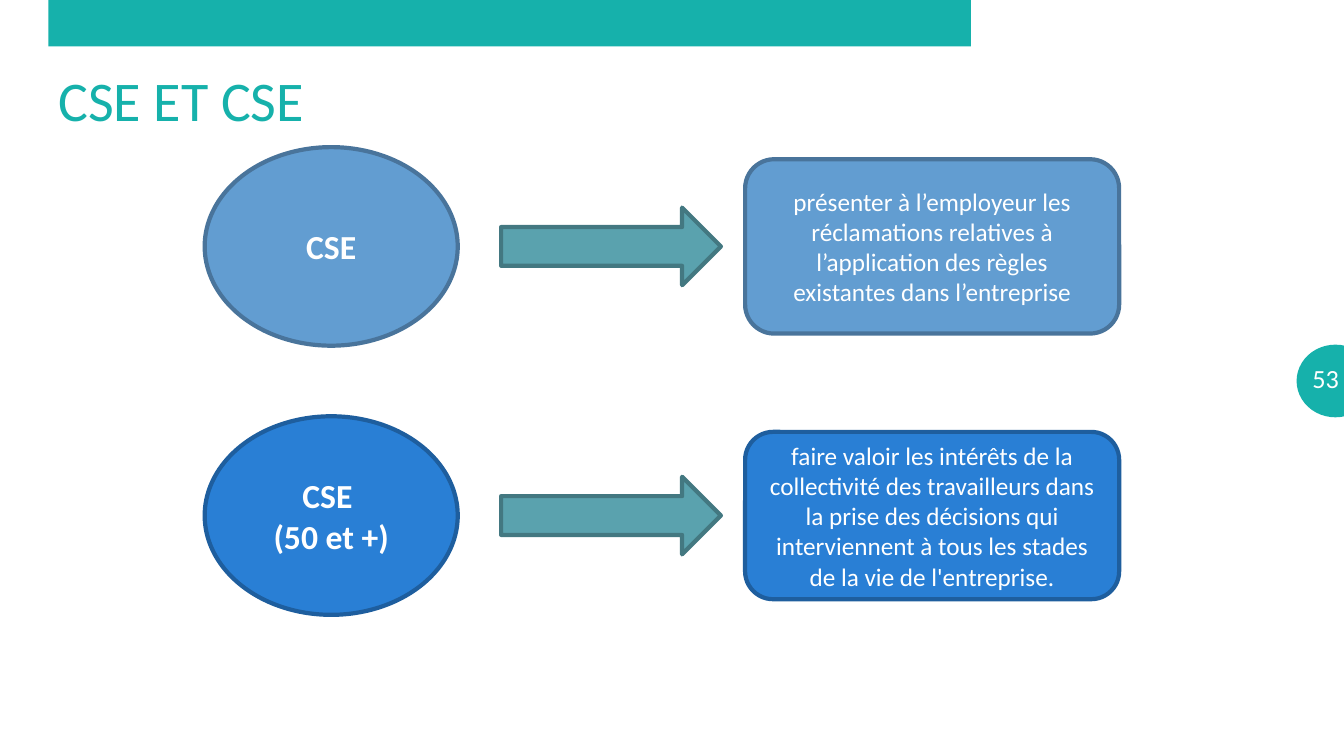
from pptx import Presentation
from pptx import util as u
from pptx.dml.color import RGBColor
from pptx.enum import shapes, text

SHAPE = shapes.MSO_SHAPE
ALIGN = text.PP_ALIGN
TEAL, WHITE = "16B1AB", "FFFFFF"
ROWS = [
    (["CSE"],
     "présenter à l’employeur les réclamations relatives à l’application "
     "des règles existantes dans l’entreprise",
     1.73, "629DD1", "49749B"),
    (["CSE ", "(50 et +)"],
     "faire valoir les intérêts de la collectivité des travailleurs dans "
     "la prise des décisions qui interviennent à tous les stades de la vie "
     "de l'entreprise.",
     1.66, "297FD5", "1E5E9E"),
]


def rgb(value):
    return RGBColor.from_string(value)


def write(sp, lines, size, color=WHITE, bold=False, align=ALIGN.CENTER, inset=(0.1, 0.05)):
    tf = sp.text_frame
    mx, my = map(u.Inches, inset)
    frame = {"word_wrap": True, "vertical_anchor": text.MSO_ANCHOR.MIDDLE,
             "margin_left": mx, "margin_right": mx,
             "margin_top": my, "margin_bottom": my}
    for name, value in frame.items():
        setattr(tf, name, value)
    for i, line in enumerate(lines):
        p = tf.add_paragraph() if i else tf.paragraphs[0]
        p.alignment = align
        r = p.add_run()
        r.text = line
        for name, value in {"name": "Calibri", "size": u.Pt(size), "bold": bold}.items():
            setattr(r.font, name, value)
        r.font.color.rgb = rgb(color)


def add_shape(s, kind, box, fill, line=None, width=3):
    sp = s.shapes.add_shape(kind, *map(u.Inches, box))
    sp.shadow.inherit = False
    sp.fill.solid()
    sp.fill.fore_color.rgb = rgb(fill)
    if line:
        sp.line.color.rgb = rgb(line)
        sp.line.width = u.Pt(width)
    else:
        sp.line.fill.background()
    return sp


def add_header(s, x, y, w, h):
    add_shape(s, SHAPE.RECTANGLE, (x, y, 9.15, 0.46), TEAL)
    title = s.shapes.add_textbox(*map(u.Inches, (x, y + 0.6, w, h - 0.6)))
    write(title, ["CSE ET CSE"], 40, TEAL, align=ALIGN.LEFT)


def add_page_number(s, x, y, w, h):
    add_shape(s, SHAPE.OVAL, (x, y, w, h), TEAL, TEAL, 1.5)
    number = s.shapes.add_textbox(*map(u.Inches, (x - 0.04, y + 0.12, 0.58, 0.4)))
    write(number, ["53"], 18.7, align=ALIGN.RIGHT, inset=(0.13, 0.07))


def add_role(s, x, y, h, name, mission, mission_h, fill, line):
    def centred(dx, w, part_h):
        return x + dx, y + (h - part_h) / 2, w, part_h

    mission_box = add_shape(s, SHAPE.ROUNDED_RECTANGLE, centred(5.36, 3.71, mission_h), fill, line)
    write(mission_box, [mission], 18)
    add_shape(s, SHAPE.RIGHT_ARROW, centred(2.94, 2.18, 0.77), "5AA2AE", "437881")
    body = add_shape(s, SHAPE.OVAL, centred(0, 2.51, h), fill, line)
    write(body, name, 24, bold=True)


def main():
    prs = Presentation()
    prs.slide_width, prs.slide_height = u.Inches(13.33), u.Inches(7.5)
    s = prs.slides.add_slide(prs.slide_layouts[6])
    add_header(s, 0.48, 0, 12.39, 1.37)
    add_page_number(s, 12.87, 3.43, 0.75, 0.7)
    for i, row in enumerate(ROWS):
        add_role(s, 2.03, 1.46 + i * 2.67, 1.97, *row)
    prs.save("out.pptx")


if __name__ == "__main__":
    main()
